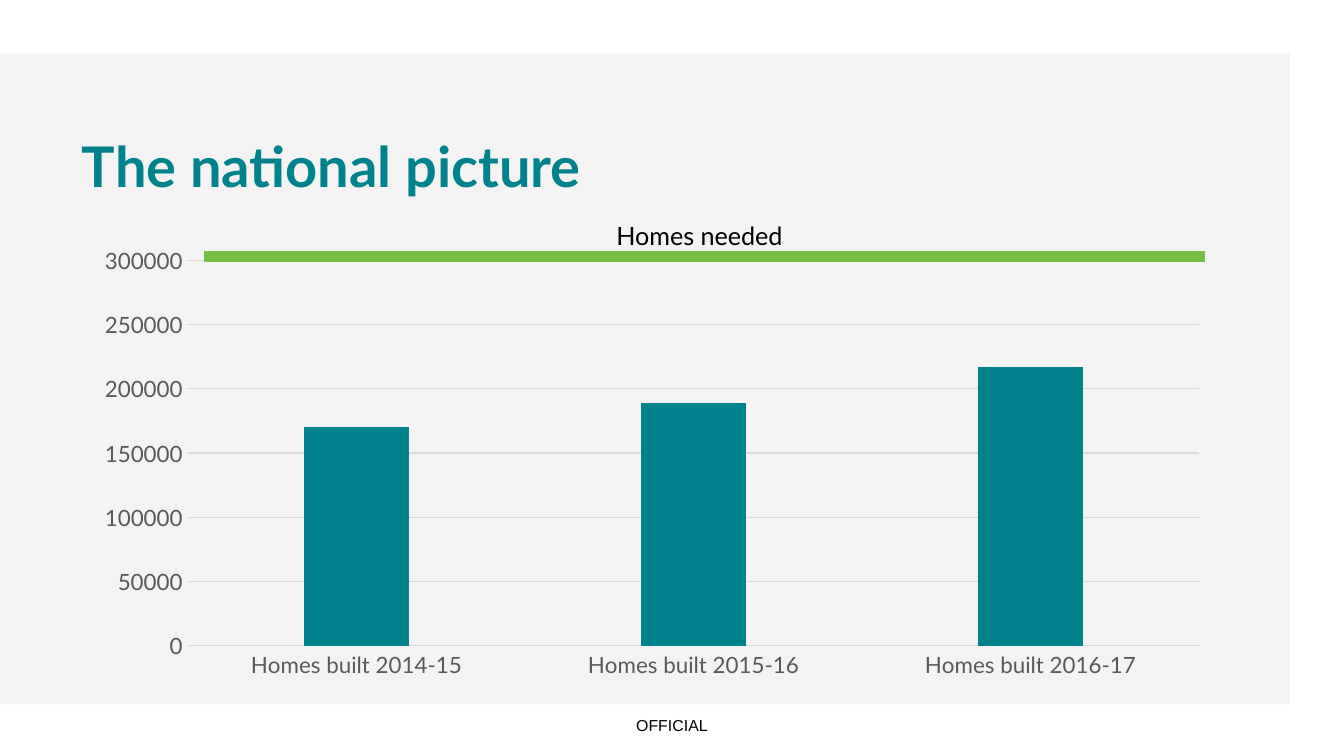
import pptx
import pptx.chart.data
import pptx.dml.color
import pptx.enum.chart
import pptx.enum.shapes
import pptx.enum.text
import pptx.oxml
import pptx.oxml.ns
import pptx.util
from pptx.util import Cm

TEAL = pptx.dml.color.RGBColor(0x00, 0x82, 0x8D)
GREEN = pptx.dml.color.RGBColor(0x74, 0xC0, 0x44)
PALE_GREY = pptx.dml.color.RGBColor(0xF2, 0xF3, 0xF2)
GRID_GREY = pptx.dml.color.RGBColor(0xD9, 0xD9, 0xD9)
AXIS_GREY = pptx.dml.color.RGBColor(0x59, 0x59, 0x59)
BLACK = pptx.dml.color.RGBColor(0x00, 0x00, 0x00)


def style_font(font, size, color, name="Lato", bold=False):
    font.name = name
    font.size = pptx.util.Pt(size)
    font.bold = bold
    font.color.rgb = color


def write_text(frame, text, size, color=BLACK, name="Lato", bold=False,
               align=pptx.enum.text.PP_ALIGN.LEFT, line_spacing=None):
    paragraph = frame.paragraphs[0]
    paragraph.alignment = align
    if line_spacing:
        paragraph.line_spacing = pptx.util.Pt(line_spacing)
    run = paragraph.add_run()
    run.text = text
    style_font(run.font, size, color, name, bold)


class SlideBuilder:
    def __init__(self, slide):
        self.shapes = slide.shapes

    def panel(self, left, top, width, height, color):
        panel = self.shapes.add_shape(
            pptx.enum.shapes.MSO_SHAPE.RECTANGLE, left, top, width, height)
        panel.shadow.inherit = False
        panel.fill.solid()
        panel.fill.fore_color.rgb = color
        panel.line.fill.background()

    def text(self, left, top, width, height, text, inset=True, **style):
        frame = self.shapes.add_textbox(left, top, width, height).text_frame
        frame.word_wrap = True
        if not inset:
            frame.margin_left = frame.margin_right = 0
            frame.margin_top = frame.margin_bottom = 0
        write_text(frame, text, **style)

    def rule(self, left, right, y, color, weight):
        rule = self.shapes.add_connector(
            pptx.enum.shapes.MSO_CONNECTOR.STRAIGHT, left, y, right, y)
        rule.line.color.rgb = color
        rule.line.width = pptx.util.Pt(weight)
        properties = rule._element.spPr
        properties.append(pptx.oxml.parse_xml(
            "<a:effectLst %s/>" % pptx.oxml.ns.nsdecls("a")))

    def column_chart(self, left, top, width, height, homes_built, maximum, step):
        data = pptx.chart.data.CategoryChartData()
        data.categories = list(homes_built)
        data.add_series("Series 1", list(homes_built.values()))
        chart = self.shapes.add_chart(
            pptx.enum.chart.XL_CHART_TYPE.COLUMN_CLUSTERED,
            left, top, width, height, data).chart
        chart.has_title = False
        chart.has_legend = False
        style_font(chart.font, 10, BLACK)

        columns = chart.plots[0]
        columns.gap_width = 219
        columns.overlap = -27
        columns.vary_by_categories = False
        fill = columns.series[0].format.fill
        fill.solid()
        fill.fore_color.rgb = TEAL

        years, homes = chart.category_axis, chart.value_axis
        for axis in (years, homes):
            axis.major_tick_mark = pptx.enum.chart.XL_TICK_MARK.NONE
            axis.minor_tick_mark = pptx.enum.chart.XL_TICK_MARK.NONE
            style_font(axis.tick_labels.font, 12, AXIS_GREY)
        homes.minimum_scale = 0
        homes.maximum_scale = maximum
        homes.major_unit = step
        homes.has_major_gridlines = True
        homes.format.line.fill.background()
        for line in (years.format.line, homes.major_gridlines.format.line):
            line.color.rgb = GRID_GREY
            line.width = pptx.util.Pt(0.75)


def main():
    deck = pptx.Presentation()
    deck.slide_width, deck.slide_height = Cm(25.4), Cm(14.29)
    builder = SlideBuilder(deck.slides.add_slide(deck.slide_layouts[6]))
    center = pptx.enum.text.PP_ALIGN.CENTER

    builder.text(0, Cm(13.41), deck.slide_width, Cm(0.61), "OFFICIAL",
                 size=8.5, name="Arial", align=center)
    builder.panel(0, Cm(1.02), Cm(24.38), Cm(12.29), PALE_GREY)
    builder.text(Cm(1.55), Cm(2.69), Cm(19.23), Cm(1.9), "The national picture",
                 inset=False, size=30, color=TEAL, bold=True, line_spacing=30)
    homes_built = {
        "Homes built 2014-15": 170000,
        "Homes built 2015-16": 189000,
        "Homes built 2016-17": 217000,
    }
    builder.column_chart(Cm(1.55), Cm(4.5), Cm(21.54), Cm(8.48),
                         homes_built, maximum=300000, step=50000)
    builder.rule(Cm(3.86), Cm(22.78), Cm(4.85), GREEN, weight=6)
    builder.text(Cm(3.86), Cm(4.04), Cm(18.72), Cm(0.84), "Homes needed",
                 size=13.5, align=center)
    deck.save("out.pptx")


if __name__ == "__main__":
    main()
